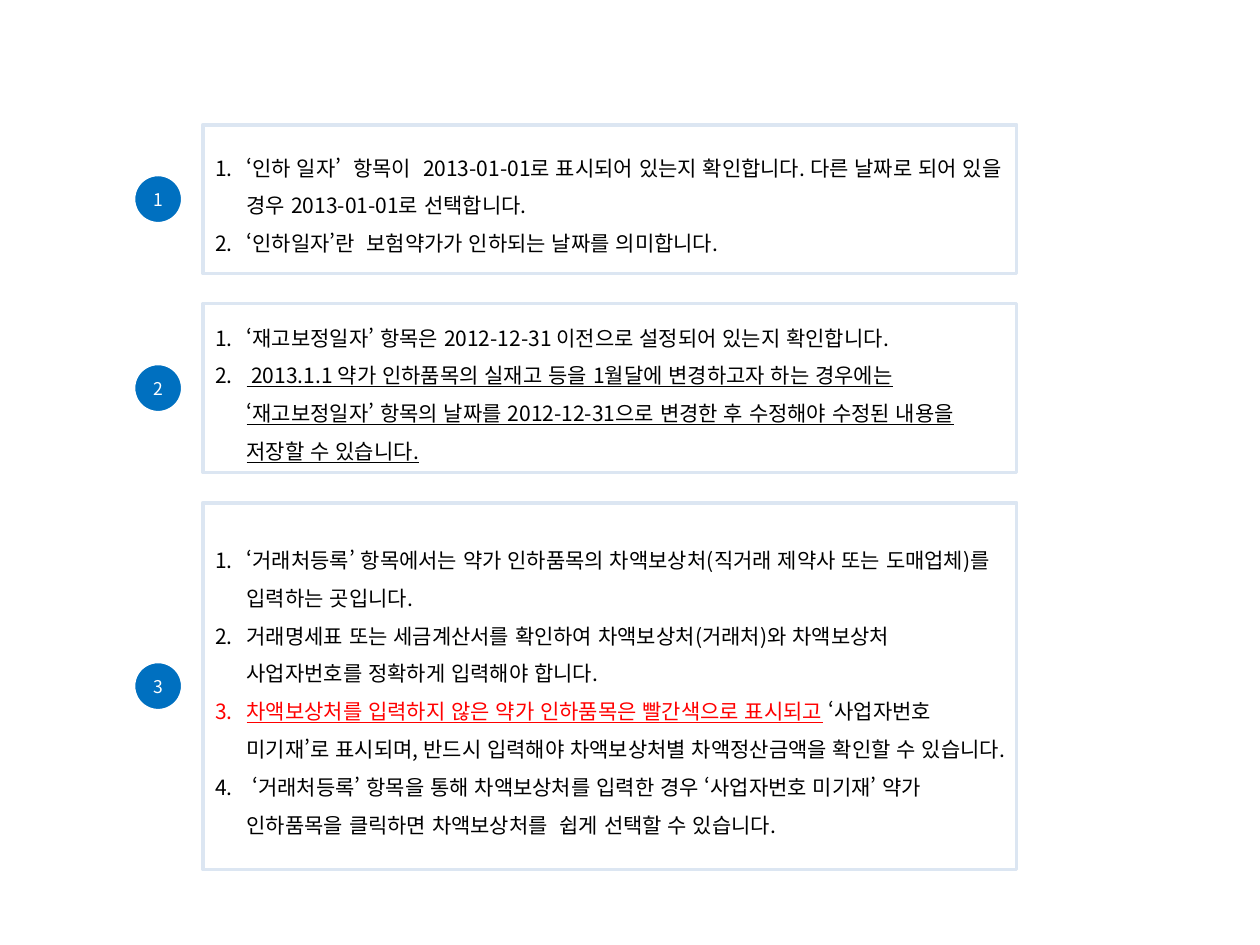
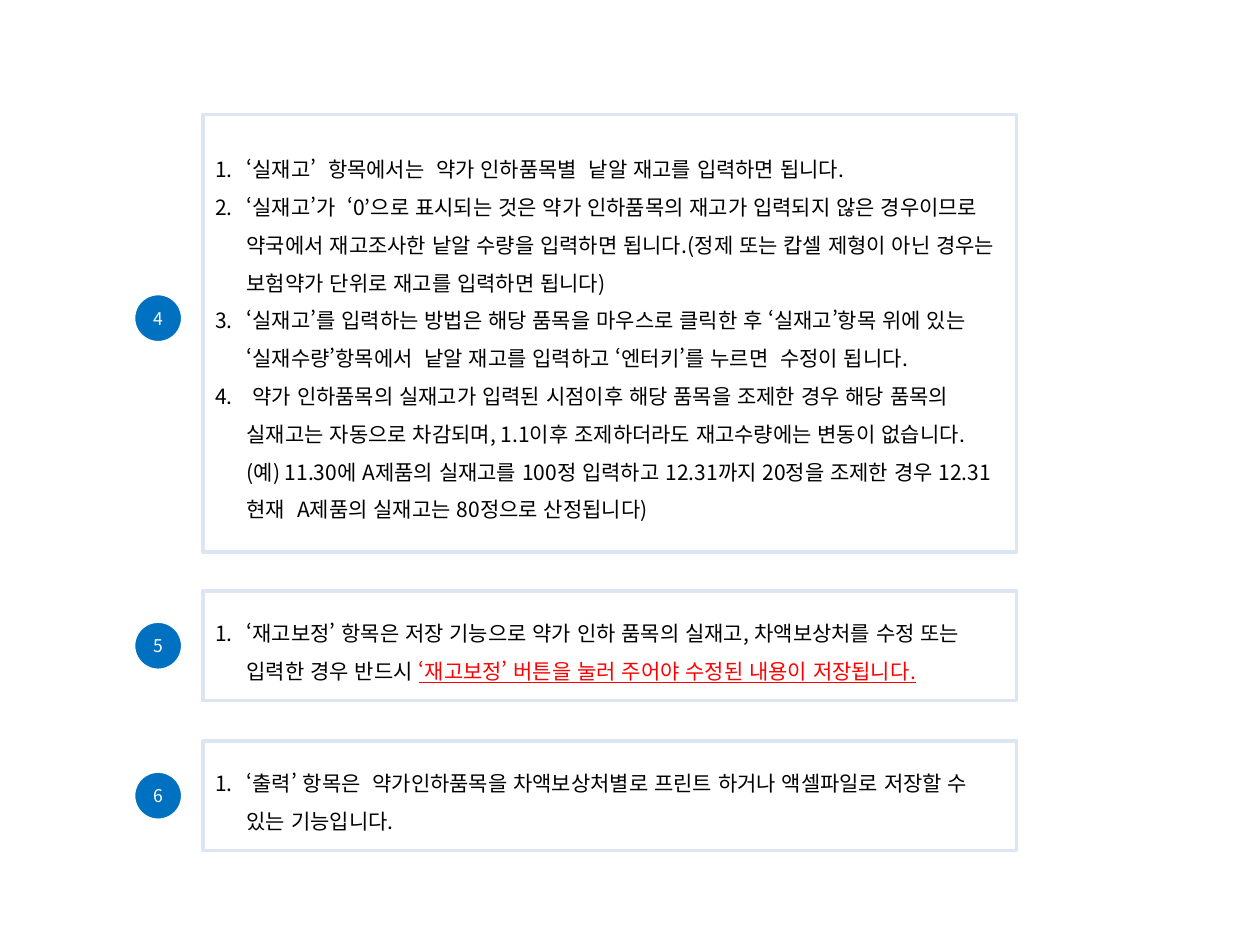
"""Build two slides of numbered guidance panels for the price-cut stock screen."""
import pptx
import pptx.dml.color
import pptx.enum.lang
import pptx.enum.shapes
import pptx.enum.text
import pptx.oxml.ns
import pptx.util
from lxml import etree
from pptx.util import Inches

COLORS = {"badge": "0070C0", "white": "FFFFFF", "border": "DCE6F2", "text": "000000", "alert": "FF0000"}
FONT = "Noto Sans CJK KR"
PANEL_LEFT, PANEL_WIDTH = 1.61, 6.46
BADGE_LEFT, BADGE_SIZE = 1.06, 0.39
INDENT = 0.25

PLAIN, UNDERLINED, ALERT = (None, False), (None, True), ("alert", True)


class GuideDeck:
    def __init__(self):
        self.deck = pptx.Presentation()
        self.deck.slide_width, self.deck.slide_height = Inches(10), Inches(7.5)
        self.page = None

    def color(self, name):
        return pptx.dml.color.RGBColor.from_string(COLORS[name])

    def add_page(self):
        self.page = self.deck.slides.add_slide(self.deck.slide_layouts[6])

    def add_box(self, kind, left, top, width, height, fill, line):
        box = self.page.shapes.add_shape(kind, Inches(left), Inches(top), Inches(width), Inches(height))
        box.shadow.inherit = False
        box.fill.solid()
        box.fill.fore_color.rgb = self.color(fill)
        box.line.color.rgb = self.color(line)
        box.line.width = pptx.util.Pt(2)
        box.text_frame.word_wrap = True
        box.text_frame.vertical_anchor = pptx.enum.text.MSO_ANCHOR.MIDDLE
        return box

    def style(self, para, size, color):
        para.font.size = pptx.util.Pt(size)
        para.font.color.rgb = self.color(color)
        para.font.name = FONT
        defaults = para._p.pPr.find(pptx.oxml.ns.qn("a:defRPr"))
        etree.SubElement(defaults, pptx.oxml.ns.qn("a:ea"), typeface=FONT)

    def add_badge(self, number, center):
        box = self.add_box(pptx.enum.shapes.MSO_SHAPE.OVAL, BADGE_LEFT, center - BADGE_SIZE / 2,
                           BADGE_SIZE, BADGE_SIZE, "badge", "white")
        para = box.text_frame.paragraphs[0]
        para.text = str(number)
        para.alignment = pptx.enum.text.PP_ALIGN.CENTER
        self.style(para, 10, "white")

    def add_item(self, para, spans):
        para.alignment = pptx.enum.text.PP_ALIGN.LEFT
        para.line_spacing = 1.5
        properties = para._p.get_or_add_pPr()
        properties.set("marL", str(Inches(INDENT)))
        properties.set("indent", str(Inches(-INDENT)))
        etree.SubElement(properties, pptx.oxml.ns.qn("a:buFont"), typeface="+mj-lt")
        etree.SubElement(properties, pptx.oxml.ns.qn("a:buAutoNum"), type="arabicPeriod")
        self.style(para, 12, "text")
        for text, (color, underlined) in spans:
            for index, line in enumerate(text.split("\n")):
                if index:
                    para.add_line_break()
                span = para.add_run()
                span.text = line
                span.font.language_id = pptx.enum.lang.MSO_LANGUAGE_ID.KOREAN
                if color:
                    span.font.color.rgb = self.color(color)
                if underlined:
                    span.font.underline = True

    def add_panel(self, number, top, height, items, badge_shift=0):
        self.add_badge(number, top + height / 2 + badge_shift)
        box = self.add_box(pptx.enum.shapes.MSO_SHAPE.RECTANGLE, PANEL_LEFT, top,
                           PANEL_WIDTH, height, "white", "border")
        frame = box.text_frame
        for index, item in enumerate(items):
            para = frame.add_paragraph() if index else frame.paragraphs[0]
            self.add_item(para, [(item, PLAIN)] if isinstance(item, str) else item)


def main():
    guide = GuideDeck()

    guide.add_page()
    guide.add_panel(1, 0.99, 1.18, [
        "‘인하 일자’  항목이  2013-01-01로 표시되어 있는지 확인합니다. 다른 날짜로 되어 있을 경우 2013-01-01로 선택합니다.",
        "‘인하일자’란  보험약가가 인하되는 날짜를 의미합니다.",
    ])
    guide.add_panel(2, 2.41, 1.34, [
        "‘재고보정일자’ 항목은 2012-12-31 이전으로 설정되어 있는지 확인합니다.",
        [(" 2013.1.1 약가 인하품목의 실재고 등을 1월달에 변경하고자 하는 경우에는 ‘재고보정일자’ 항목의 날짜를 "
          "2012-12-31으로 변경한 후 수정해야 수정된 내용을 저장할 수 있습니다.", UNDERLINED)],
    ])
    guide.add_panel(3, 3.99, 2.91, [
        "‘거래처등록’ 항목에서는 약가 인하품목의 차액보상처(직거래 제약사 또는 도매업체)를  입력하는 곳입니다.",
        "거래명세표 또는 세금계산서를 확인하여 차액보상처(거래처)와 차액보상처 사업자번호를 정확하게 입력해야 합니다.",
        [("차액보상처를 입력하지 않은 약가 인하품목은 빨간색으로 표시되고", ALERT),
         (" ‘사업자번호 미기재’로 표시되며, 반드시 입력해야 차액보상처별 차액정산금액을 확인할 수 있습니다.", PLAIN)],
        " ‘거래처등록’ 항목을 통해 차액보상처를 입력한 경우 ‘사업자번호 미기재’ 약가 인하품목을 클릭하면 "
        "차액보상처를  쉽게 선택할 수 있습니다.",
    ])

    guide.add_page()
    guide.add_panel(4, 0.91, 3.47, [
        "‘실재고’  항목에서는  약가 인하품목별  낱알 재고를 입력하면 됩니다.",
        "‘실재고’가  ‘0’으로 표시되는 것은 약가 인하품목의 재고가 입력되지 않은 경우이므로 약국에서 재고조사한 "
        "낱알 수량을 입력하면 됩니다.(정제 또는 캅셀 제형이 아닌 경우는 보험약가 단위로 재고를 입력하면 됩니다)",
        "‘실재고’를 입력하는 방법은 해당 품목을 마우스로 클릭한 후 ‘실재고’항목 위에 있는 "
        "‘실재수량’항목에서  낱알 재고를 입력하고 ‘엔터키’를 누르면  수정이 됩니다.",
        " 약가 인하품목의 실재고가 입력된 시점이후 해당 품목을 조제한 경우 해당 품목의 실재고는 자동으로 차감되며, "
        "1.1이후 조제하더라도 재고수량에는 변동이 없습니다.\n"
        "(예) 11.30에 A제품의 실재고를 100정 입력하고 12.31까지 20정을 조제한 경우 "
        "12.31 현재  A제품의 실재고는 80정으로 산정됩니다)",
    ], badge_shift=-0.12)
    guide.add_panel(5, 4.69, 0.87, [
        [("‘재고보정’ 항목은 저장 기능으로 약가 인하 품목의 실재고, 차액보상처를 수정 또는 입력한 경우 반드시 ", PLAIN),
         ("‘재고보정’ 버튼을 눌러 주어야 수정된 내용이 저장됩니다.", ALERT)],
    ])
    guide.add_panel(6, 5.88, 0.87, [
        "‘출력’ 항목은  약가인하품목을 차액보상처별로 프린트 하거나 액셀파일로 저장할 수 있는 기능입니다.",
    ])

    guide.deck.save("out.pptx")


if __name__ == "__main__":
    main()
